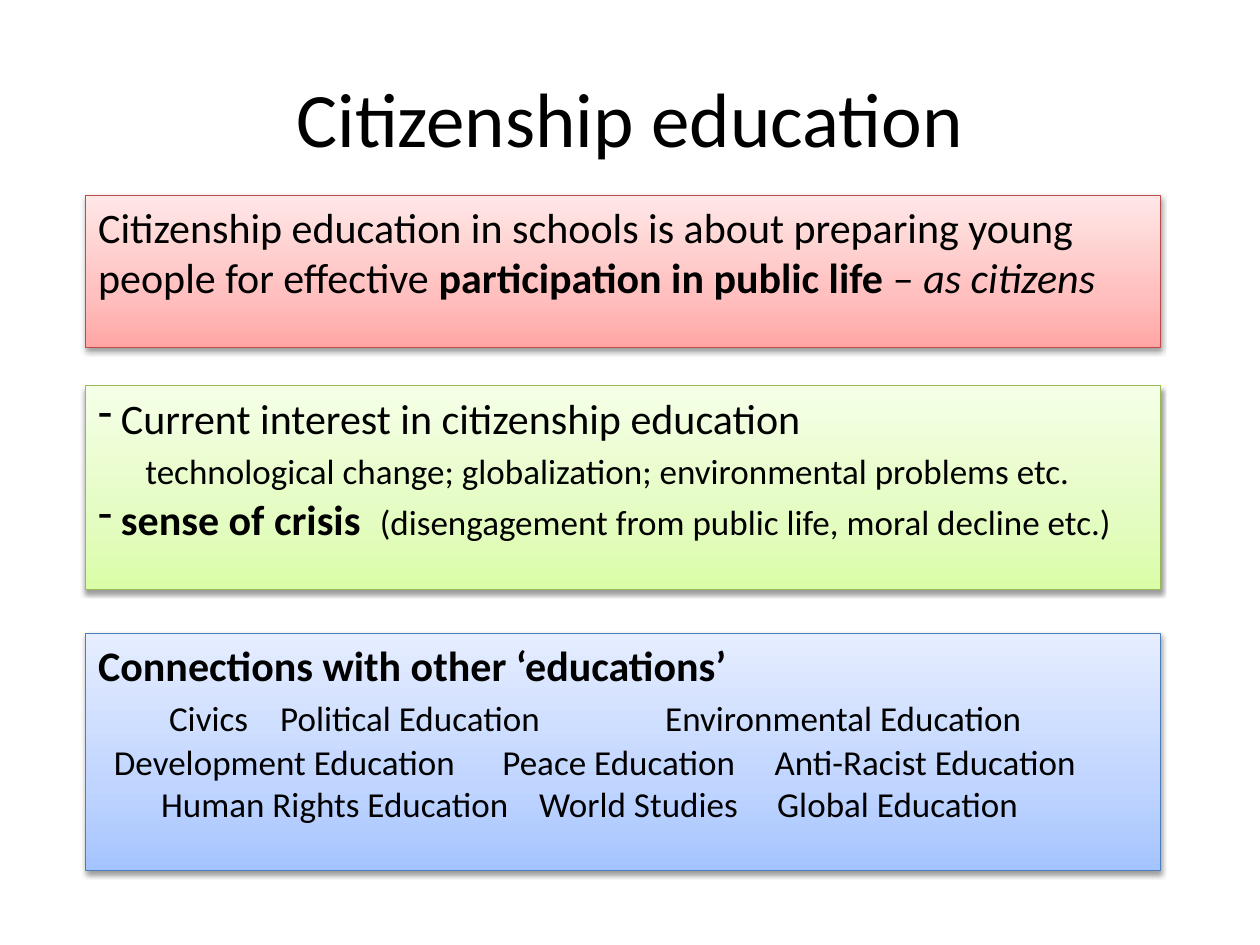
from copy import deepcopy
from dataclasses import dataclass

from lxml.etree import SubElement
from pptx import Presentation
from pptx.dml.color import RGBColor
from pptx.enum.shapes import MSO_SHAPE
from pptx.enum.text import MSO_ANCHOR, PP_ALIGN
from pptx.oxml.ns import qn
from pptx.util import Pt

FONT = "Calibri"
BLACK = "000000"
PANEL_LEFT = 49
PANEL_WIDTH = 614
STOP_POSITIONS = (0, 0.35, 1)


@dataclass
class Span:
    text: str
    size: float = 24
    bold: bool = False
    italic: bool = False


@dataclass
class Line:
    spans: list[Span]
    bullet: str = ""
    indent: float = 0
    before: float = 0
    after: float = 0
    tabs: tuple[float, ...] = ()


@dataclass
class Panel:
    top: float
    height: float
    gradient: tuple[str, str, str]
    outline: str
    lines: list[Line]


PANELS = [
    Panel(111.6, 87.1, ("FFA6A5", "FFC0BF", "FFE7E7"), "BF4C48", [
        Line([
            Span("Citizenship education in schools is about preparing young people for effective "),
            Span("participation in public life ", bold=True),
            Span("– "),
            Span("as citizens", italic=True),
        ]),
    ]),
    Panel(220.5, 116.4, ("DAFDA7", "E4FCC2", "F5FFE7"), "98B955", [
        Line([Span("Current interest in citizenship education")], bullet="-", indent=13),
        Line([Span("technological change; globalization; environmental problems etc.", 20)],
             indent=27, before=4, after=1),
        Line([
            Span("sense of crisis  ", bold=True),
            Span("(disengagement from public life, moral decline etc.)", 20),
        ], bullet="-", indent=13),
    ]),
    Panel(361.9, 135.7, ("A4C4FF", "BFD4FF", "E6EEFF"), "4B7EBC", [
        Line([Span("Connections with other ‘educations’", bold=True)]),
        Line([Span("\tCivics\tPolitical Education\tEnvironmental Education", 20)],
             before=4, after=1, tabs=(40.5, 104, 324)),
        Line([Span("\tDevelopment Education\tPeace Education\tAnti-Racist Education", 20)],
             tabs=(9, 231, 386.5)),
        Line([Span("\tHuman Rights Education\tWorld Studies\tGlobal Education", 20)],
             tabs=(36, 252, 388)),
    ]),
]


def paint(color_format, color: str) -> None:
    color_format.rgb = RGBColor.from_string(color)


def format_font(font, size: float, bold: bool = False, italic: bool = False) -> None:
    font.name = FONT
    font.size = Pt(size)
    font.bold = bold
    font.italic = italic
    paint(font.color, BLACK)


def fill_gradient(box, colors: tuple[str, str, str]) -> None:
    box.fill.gradient()
    box.fill.gradient_angle = 90
    stop_list = box.element.spPr.find(qn("a:gradFill")).find(qn("a:gsLst"))
    stop_list.append(deepcopy(stop_list[0]))
    for stop, position, color in zip(box.fill.gradient_stops, STOP_POSITIONS, colors):
        paint(stop.color, color)
        stop.position = position


def add_shadow(box) -> None:
    box.shadow.inherit = False
    effects = box.element.spPr.find(qn("a:effectLst"))
    shadow = SubElement(effects, qn("a:outerShdw"), blurRad=str(Pt(3.1)),
                        dist=str(Pt(1.6)), dir="5400000", rotWithShape="0")
    color = SubElement(shadow, qn("a:srgbClr"), val=BLACK)
    SubElement(color, qn("a:alpha"), val="38000")


def write_line(para, line: Line) -> None:
    para.alignment = PP_ALIGN.LEFT
    para.space_before = Pt(line.before)
    para.space_after = Pt(line.after)
    properties = para._p.get_or_add_pPr()
    properties.set("marL", str(Pt(line.indent)))
    if line.bullet:
        properties.set("indent", str(-Pt(line.indent)))
        SubElement(properties, qn("a:buChar"), char=line.bullet)
    if line.tabs:
        tab_list = SubElement(properties, qn("a:tabLst"))
        for position in line.tabs:
            SubElement(tab_list, qn("a:tab"), pos=str(Pt(position)), algn="l")
    for span in line.spans:
        run = para.add_run()
        run.text = span.text
        format_font(run.font, span.size, span.bold, span.italic)


def draw_panel(page, panel: Panel) -> None:
    box = page.shapes.add_shape(MSO_SHAPE.RECTANGLE, Pt(PANEL_LEFT), Pt(panel.top),
                                Pt(PANEL_WIDTH), Pt(panel.height))
    fill_gradient(box, panel.gradient)
    paint(box.line.color, panel.outline)
    box.line.width = Pt(0.75)
    add_shadow(box)
    frame = box.text_frame
    frame.word_wrap = True
    frame.vertical_anchor = MSO_ANCHOR.TOP
    for index, line in enumerate(panel.lines):
        para = frame.add_paragraph() if index else frame.paragraphs[0]
        write_line(para, line)


def write_title(page, text: str) -> None:
    title = page.shapes.title
    title.left, title.top, title.width, title.height = Pt(36), Pt(21.6), Pt(648), Pt(90)
    title.text_frame.text = text
    title.text_frame.vertical_anchor = MSO_ANCHOR.MIDDLE
    para = title.text_frame.paragraphs[0]
    para.alignment = PP_ALIGN.CENTER
    format_font(para.runs[0].font, 44)


def main() -> None:
    deck = Presentation()
    deck.slide_width, deck.slide_height = Pt(720), Pt(540)
    page = deck.slides.add_slide(deck.slide_layouts[5])
    write_title(page, "Citizenship education")
    for panel in PANELS:
        draw_panel(page, panel)
    deck.save("out.pptx")


if __name__ == "__main__":
    main()
